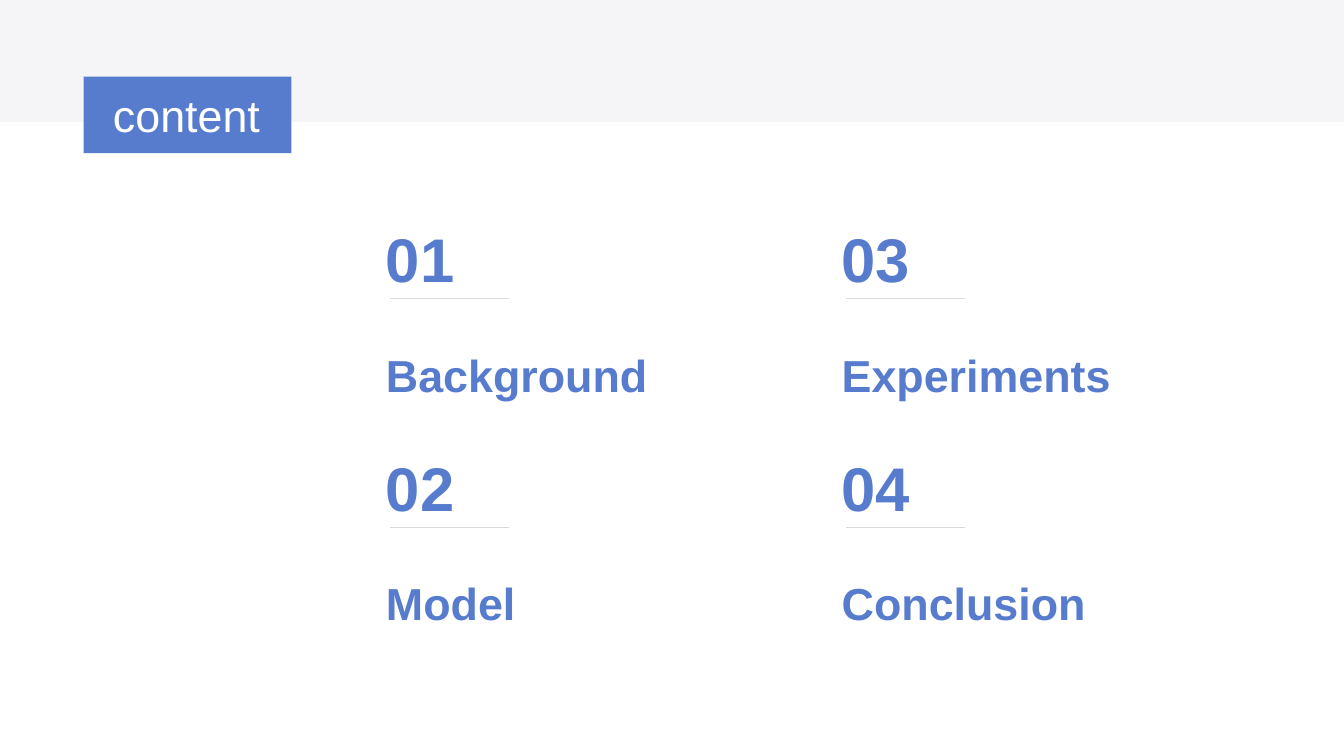
"""Build a contents slide with four numbered sections in a two-by-two grid."""
from pptx import Presentation
from pptx.dml.color import RGBColor
from pptx.enum.shapes import MSO_CONNECTOR, MSO_SHAPE
from pptx.enum.text import MSO_ANCHOR, MSO_AUTO_SIZE, PP_ALIGN
from pptx.oxml.ns import qn
from pptx.util import Inches, Pt
from lxml import etree

BLUE = RGBColor(0x57, 0x7C, 0xCE)
PALE = RGBColor(0xF5, 0xF5, 0xF8)
GRAY = RGBColor(0xD9, 0xD9, 0xD9)
WHITE = RGBColor(0xFF, 0xFF, 0xFF)

SECTIONS = ["Background", "Model", "Experiments", "Conclusion"]
COLUMN_LEFTS = [3.73, 8.25]
ROW_TOPS = [2.14, 4.41]


def add_rectangle(page, left, top, width, height, color):
    box = page.shapes.add_shape(
        MSO_SHAPE.RECTANGLE, Inches(left), Inches(top), Inches(width), Inches(height))
    box.shadow.inherit = False
    box.fill.solid()
    box.fill.fore_color.rgb = color
    box.line.fill.background()


def write_text(box, text, size, color, bold):
    box.text_frame.word_wrap = True
    para = box.text_frame.paragraphs[0]
    span = para.add_run()
    span.text = text
    span.font.name = "Arial"
    span.font.size = Pt(size)
    span.font.bold = bold
    span.font.color.rgb = color
    return para


deck = Presentation()
deck.slide_width = Inches(13.33)
deck.slide_height = Inches(7.5)
page = deck.slides.add_slide(deck.slide_layouts[5])

add_rectangle(page, 0, 0, 13.33, 1.21, PALE)

for index, section in enumerate(SECTIONS):
    column, row = divmod(index, len(ROW_TOPS))
    left, top = COLUMN_LEFTS[column], ROW_TOPS[row]

    label = page.shapes.add_textbox(
        Inches(left), Inches(top + 0.99), Inches(3.54), Inches(1.05))
    para = write_text(label, section, 32, BLUE, True)
    para.alignment = PP_ALIGN.JUSTIFY
    para.line_spacing = 1.5
    para.space_after = Pt(20)

    number = page.shapes.add_textbox(
        Inches(left), Inches(top), Inches(0.89), Inches(0.84))
    write_text(number, f"{index + 1:02}", 44, BLUE, True)

    rule_top = Inches(top + 0.82)
    rule = page.shapes.add_connector(
        MSO_CONNECTOR.STRAIGHT, Inches(left + 1.32), rule_top, Inches(left + 0.14), rule_top)
    rule.line.color.rgb = GRAY
    rule.line.width = Pt(0.5)
    etree.SubElement(rule.element.spPr, qn("a:effectLst"))

add_rectangle(page, 0.83, 0.76, 2.06, 0.76, BLUE)

title = page.shapes.title
title.left, title.top = Inches(0.93), Inches(0.82)
title.width, title.height = Inches(1.84), Inches(0.64)
title.text_frame.auto_size = MSO_AUTO_SIZE.NONE
title.text_frame.vertical_anchor = MSO_ANCHOR.TOP
heading = write_text(title, "content", 32, WHITE, False)
heading.alignment = PP_ALIGN.CENTER
title.element.getparent().append(title.element)

deck.save("out.pptx")
